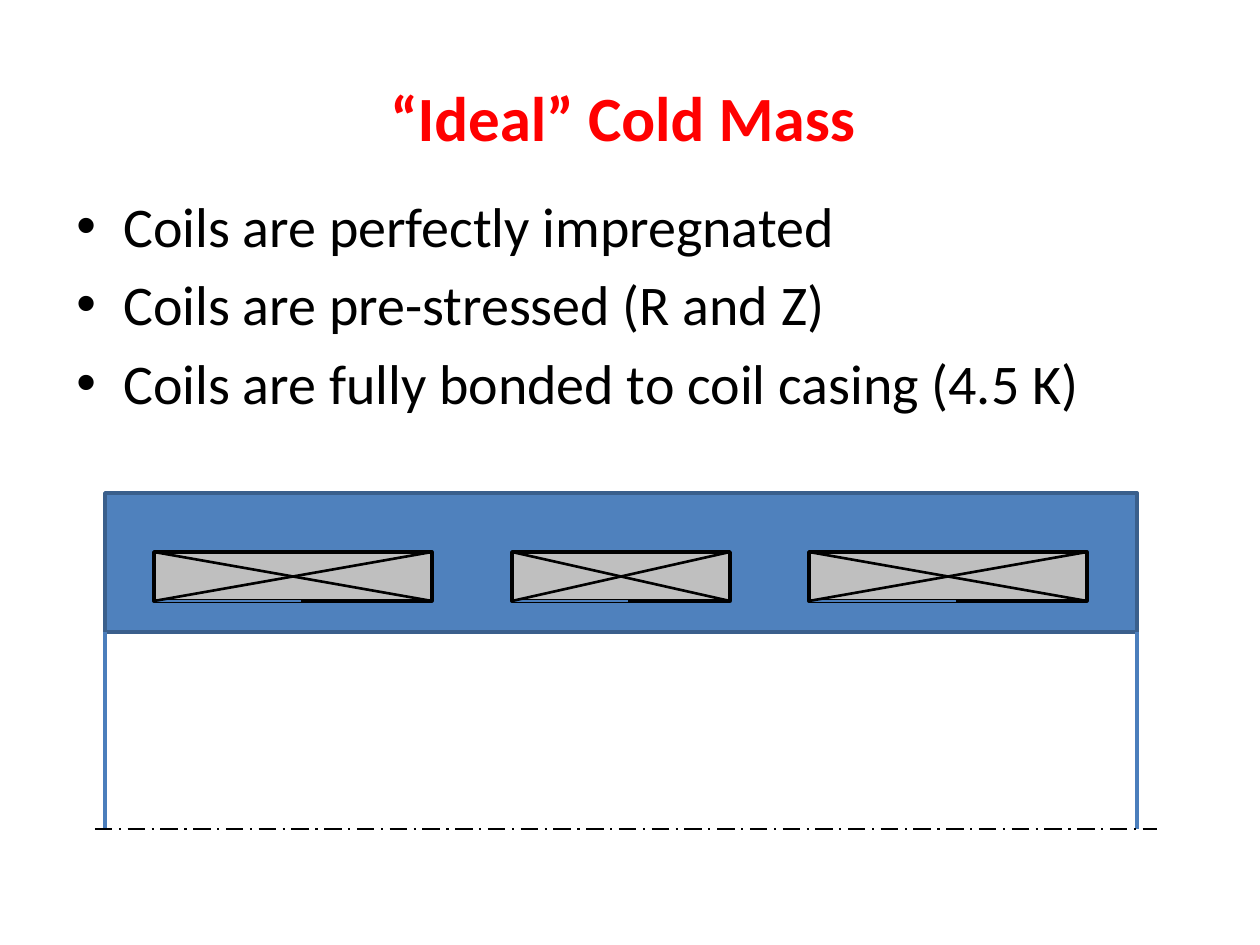
from lxml import etree
from pptx import Presentation
from pptx.dml.color import RGBColor
from pptx.enum.dml import MSO_LINE
from pptx.enum.shapes import MSO_CONNECTOR, MSO_SHAPE
from pptx.enum.text import MSO_ANCHOR, PP_ALIGN
from pptx.oxml.ns import qn
from pptx.util import Pt

EMU_PER_PX = 914400 / 126
BLACK, BLUE, LINE_BLUE = "000000", "4F81BD", "4B7EBC"


def px(n):
    return round(n * EMU_PER_PX)


def rgb(value):
    return RGBColor.from_string(value)


def add_bullet(p, indent):
    pPr = p._p.get_or_add_pPr()
    pPr.set("marL", str(px(indent)))
    pPr.set("indent", str(-px(indent)))
    etree.SubElement(pPr, qn("a:buFont")).set("typeface", "Arial")
    etree.SubElement(pPr, qn("a:buChar")).set("char", "•")


def add_text(shapes, box, lines, size, color=BLACK, bold=False, align=PP_ALIGN.LEFT,
             anchor=MSO_ANCHOR.TOP, indent=0, gap=0):
    tf = shapes.add_textbox(*map(px, box)).text_frame
    tf.word_wrap = True
    tf.vertical_anchor = anchor
    for i, line in enumerate(lines):
        p = tf.add_paragraph() if i else tf.paragraphs[0]
        p.alignment = align
        if i and gap:
            p.space_before = Pt(gap)
        if indent:
            add_bullet(p, indent)
        r = p.add_run()
        r.text = line
        r.font.name, r.font.size, r.font.bold = "Calibri", Pt(size), bold
        r.font.color.rgb = rgb(color)


def add_rect(shapes, box, fill, line):
    sp = shapes.add_shape(MSO_SHAPE.RECTANGLE, *map(px, box))
    sp.shadow.inherit = False
    sp.fill.solid()
    sp.fill.fore_color.rgb = rgb(fill)
    sp.line.color.rgb = rgb(line)
    sp.line.width = Pt(2)


def add_line(shapes, ends, color, width, dash=None):
    cxn = shapes.add_connector(MSO_CONNECTOR.STRAIGHT, *map(px, ends))
    cxn.line.color.rgb = rgb(color)
    cxn.line.width = Pt(width)
    if dash:
        cxn.line.dash_style = dash
    etree.SubElement(cxn._element.spPr, qn("a:effectLst"))


def add_coil(shapes, x, y, w, h):
    right, bottom = x + w, y + h
    add_rect(shapes, (x, y, w, h), "BFBFBF", BLACK)
    add_line(shapes, (x, bottom, x + round(w * 0.53), bottom), LINE_BLUE, 0.75)
    add_line(shapes, (x, bottom, right, y), BLACK, 1.5)
    add_line(shapes, (x, y, right, bottom), BLACK, 1.5)


def add_cold_mass(shapes, x, y, w, h):
    casing_h, overhang = 139, 10
    axis_y = y + h
    add_rect(shapes, (x, y, w, casing_h), BLUE, "3A5F8C")
    for side in (x, x + w):
        add_line(shapes, (side, y + casing_h, side, axis_y), LINE_BLUE, 1.75)
    for dx, coil_w in ((49, 278), (407, 218), (704, 278)):
        add_coil(shapes, x + dx, y + 59, coil_w, 49)
    add_line(shapes, (x - overhang, axis_y, x + w + 2 * overhang, axis_y),
             BLACK, 1.25, MSO_LINE.LONG_DASH_DOT)


def main():
    prs = Presentation()
    prs.slide_width, prs.slide_height = px(1260), px(945)
    s = prs.slides.add_slide(prs.slide_layouts[6])
    add_text(s.shapes, (63, 38, 1134, 157), ["“Ideal” Cold Mass "], 36, color="FF0000",
             bold=True, align=PP_ALIGN.CENTER, anchor=MSO_ANCHOR.MIDDLE)
    add_text(s.shapes, (64, 185, 1134, 282), [
        "Coils are perfectly impregnated",
        "Coils are pre-stressed (R and Z)",
        "Coils are fully bonded to coil casing (4.5 K)",
    ], 32, indent=47, gap=6.4)
    add_cold_mass(s.shapes.add_group_shape().shapes, 105, 493, 1032, 336)
    prs.save("out.pptx")


if __name__ == "__main__":
    main()
